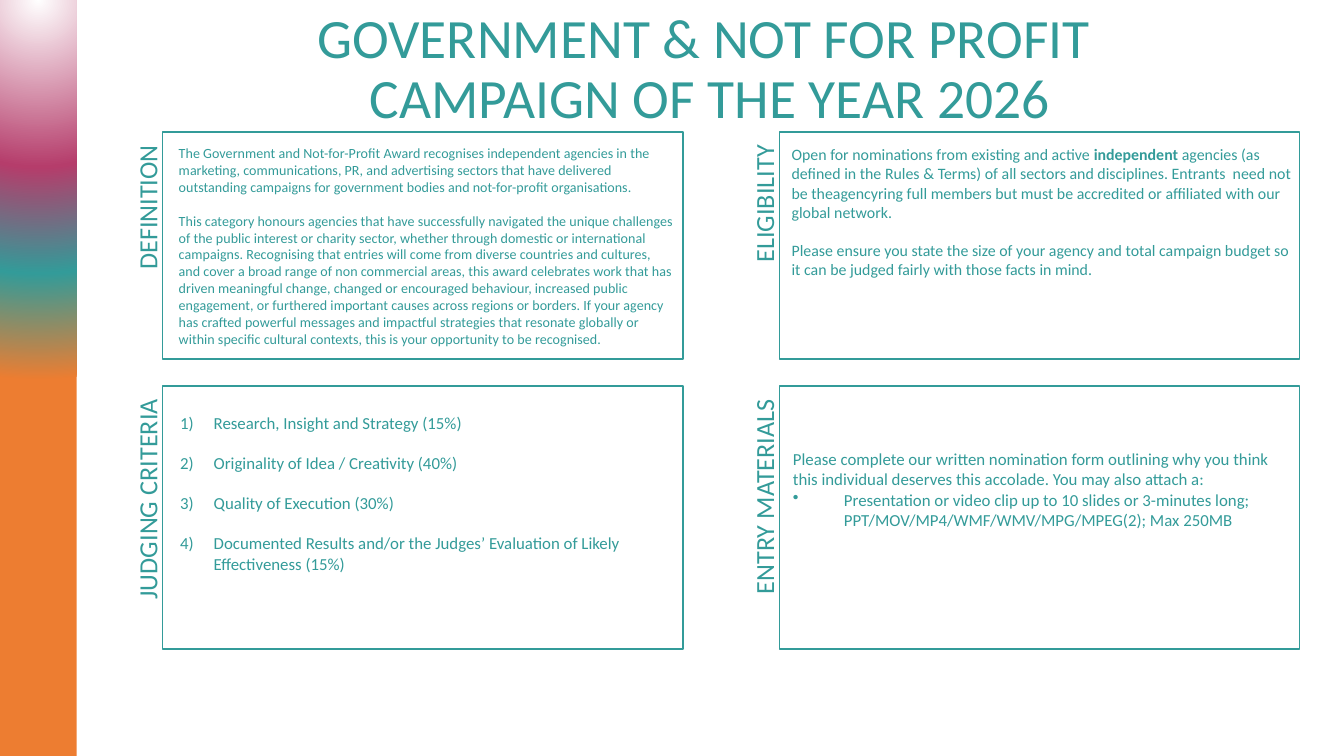
from pptx import Presentation
from pptx.dml.color import RGBColor
from pptx.enum.shapes import MSO_SHAPE
from pptx.enum.text import MSO_ANCHOR, PP_ALIGN
from pptx.oxml import parse_xml
from pptx.oxml.ns import nsdecls
from pptx.util import Inches, Pt

RECT = MSO_SHAPE.RECTANGLE
TOP, MIDDLE = MSO_ANCHOR.TOP, MSO_ANCHOR.MIDDLE
CENTER, RIGHT = PP_ALIGN.CENTER, PP_ALIGN.RIGHT
TEAL = "339B99"
STOPS = [(0, "FFFFFF"), (44, "B53D6B"), (72, TEAL), (100, "ED7D31")]

WIDE = 10
HIGH = WIDE * 9 / 16
BAR = 0.57
COLS = [1.21, 5.8]
ROWS = [(0.98, 1.69), (2.87, 1.96)]
PANEL = 3.87
LABEL = 0.34


def color(code):
    return RGBColor.from_string(code)


def write(area, lines, size, anchor=TOP, gap=0):
    """Add a text box; words between asterisks are bold, gap parts the paragraphs."""
    box = slide.shapes.add_textbox(*map(Inches, area))
    frame = box.text_frame
    frame.word_wrap = True
    frame.vertical_anchor = anchor
    frame.margin_left = frame.margin_right = Inches(0.09)
    for i, line in enumerate(lines):
        para = frame.paragraphs[0] if i == 0 else frame.add_paragraph()
        para.space_before = Pt(gap if i else 0)
        for j, part in enumerate(line.split("*")):
            if j == 0:
                para.text = part
            else:
                para.add_run().text = part
            para.runs[-1].font.bold = j % 2 == 1
        for run in para.runs:
            run.font.name = "Calibri"
            run.font.size = Pt(size)
            run.font.color.rgb = color(TEAL)
    return box


deck = Presentation()
deck.slide_width, deck.slide_height = Inches(WIDE), Inches(HIGH)
slide = deck.slides.add_slide(deck.slide_layouts[6])

# Side bar with a radial blend
bar = slide.shapes.add_shape(RECT, 0, 0, Inches(BAR), Inches(HIGH))
bar.shadow.inherit = False
bar.line.fill.background()
stops = "".join(
    f'<a:gs pos="{pos * 1000}"><a:srgbClr val="{code}"/></a:gs>' for pos, code in STOPS
)
blend = parse_xml(
    f'<a:gradFill {nsdecls("a")}><a:gsLst>{stops}</a:gsLst><a:path path="circle">'
    '<a:fillToRect l="50000" t="-80000" r="50000" b="180000"/></a:path></a:gradFill>'
)
bar._element.spPr.find("{*}prstGeom").addnext(blend)

# Title
title = write(
    (BAR, 0.02, WIDE - BAR, 1.01),
    ["GOVERNMENT & NOT FOR PROFIT \vCAMPAIGN OF THE YEAR 2026"], 29.7, MIDDLE,
)
head = title.text_frame.paragraphs[0]
head.alignment = CENTER
head.line_spacing = 0.9

# Panels, each with a label turned along its left side
labels = [
    [("DEFINITION", 1.69), ("ELIGIBILITY", 1.62)],
    [("JUDGING CRITERIA", 2.03), ("ENTRY MATERIALS", 2.23)],
]
for (top, height), names in zip(ROWS, labels):
    for left, (name, size) in zip(COLS, names):
        panel = slide.shapes.add_shape(RECT, *map(Inches, (left, top, PANEL, height)))
        panel.shadow.inherit = False
        panel.fill.background()
        panel.line.color.rgb = color(TEAL)
        panel.line.width = Pt(1)
        mid_x, mid_y = left - LABEL / 3, top + size / 2 + 0.01
        label = write((mid_x - size / 2, mid_y - LABEL / 2, size, LABEL), [name], 14)
        label.rotation = 270
        label.text_frame.paragraphs[0].alignment = RIGHT

# Panel texts
write((1.24, 0.96, PANEL, 1.74), [
    "The Government and Not-for-Profit Award recognises independent agencies in the "
    "marketing, communications, PR, and advertising sectors that have delivered "
    "outstanding campaigns for government bodies and not-for-profit organisations.",
    "This category honours agencies that have successfully navigated the unique "
    "challenges of the public interest or charity sector, whether through domestic or "
    "international campaigns. Recognising that entries will come from diverse countries "
    "and cultures, and cover a broad range of non commercial areas, this award "
    "celebrates work that has driven meaningful change, changed or encouraged "
    "behaviour, increased public engagement, or furthered important causes across "
    "regions or borders. If your agency has crafted powerful messages and impactful "
    "strategies that resonate globally or within specific cultural contexts, this is "
    "your opportunity to be recognised.",
], 7.5, MIDDLE, 9)

write((5.8, 1.03, 3.94, 1.25), [
    "Open for nominations from existing and active *independent* agencies (as defined "
    "in the Rules & Terms) of all sectors and disciplines. Entrants  need not be "
    "theagencyring full members but must be accredited or affiliated with our global "
    "network.",
    "Please ensure you state the size of your agency and total campaign budget so it "
    "can be judged fairly with those facts in mind.",
], 8.5, TOP, 10.4)

judging = write((1.25, 3.02, 3.75, 1.31), [
    "Research, Insight and Strategy (15%)",
    "Originality of Idea / Creativity (40%)",
    "Quality of Execution (30%)",
    "Documented Results and/or the Judges’ Evaluation of Likely Effectiveness (15%)",
], 9, TOP, 10.7)

entry = write((5.81, 3.29, 3.84, 1.01), [
    "Please complete our written nomination form outlining why you think this "
    "individual deserves this accolade. You may also attach a:",
    "Presentation or video clip up to 10 slides or 3-minutes long; "
    "PPT/MOV/MP4/WMF/WMV/MPG/MPEG(2); Max 250MB",
], 9)

# Numbers and bullet with hanging indents
lists = [
    (judging.text_frame.paragraphs, 0.25, "buAutoNum", 'type="arabicParenR"'),
    (entry.text_frame.paragraphs[1:], 0.38, "buChar", 'char="•"'),
]
for paras, indent, tag, mark in lists:
    for para in paras:
        props = para._p.get_or_add_pPr()
        props.set("marL", str(Inches(indent)))
        props.set("indent", str(-Inches(indent)))
        props.append(parse_xml(f'<a:{tag} {nsdecls("a")} {mark}/>'))

deck.save("out.pptx")
